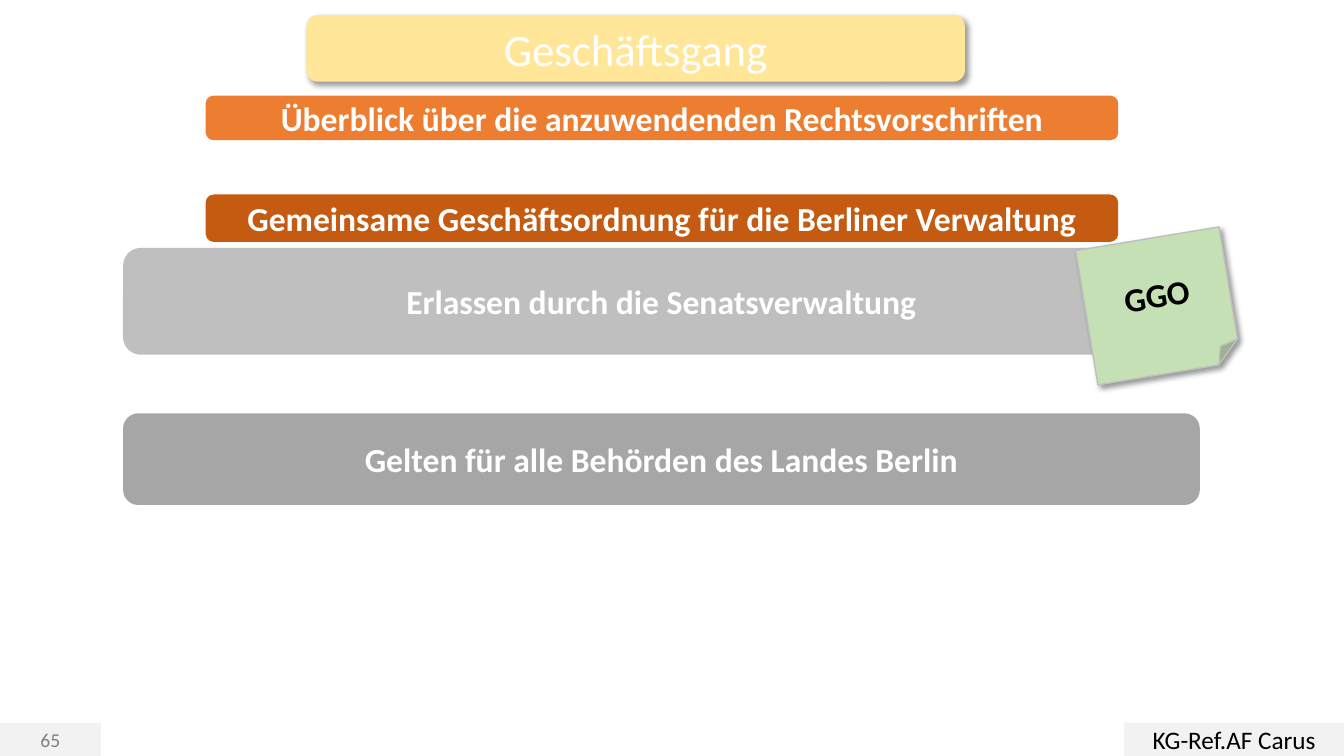
import pptx
import pptx.util
import pptx.dml.color
import pptx.enum.shapes
import pptx.enum.text
import pptx.oxml

PX = 9144
KIND = pptx.enum.shapes.MSO_SHAPE
SHADE = (
    '<a:effectLst xmlns:a="http://schemas.openxmlformats.org/drawingml/2006/main">'
    '<a:outerShdw blurRad="50800" dist="38100" dir="2700000" algn="tl" rotWithShape="0">'
    '<a:srgbClr val="000000"><a:alpha val="40000"/></a:srgbClr>'
    '</a:outerShdw></a:effectLst>'
)


def color(code):
    return pptx.dml.color.RGBColor.from_string(code)


def box(kind, place, fill, text, size, ink, bold=False, line=None):
    shape = slide.shapes.add_shape(kind, *[n * PX for n in place])
    shape.shadow.inherit = False
    shape.fill.solid()
    shape.fill.fore_color.rgb = color(fill)
    if line:
        shape.line.color.rgb = color(line)
        shape.line.width = pptx.util.Pt(1)
    else:
        shape.line.fill.background()
    frame = shape.text_frame
    frame.word_wrap = True
    frame.vertical_anchor = pptx.enum.text.MSO_ANCHOR.MIDDLE
    para = frame.paragraphs[0]
    para.alignment = pptx.enum.text.PP_ALIGN.CENTER
    run = para.add_run()
    run.text = text
    run.font.name = "Calibri"
    run.font.size = pptx.util.Pt(size)
    run.font.bold = bold
    run.font.color.rgb = color(ink)
    return shape


deck = pptx.Presentation()
deck.slide_width = 1333 * PX
deck.slide_height = 750 * PX
slide = deck.slides.add_slide(deck.slide_layouts[6])

box(KIND.RECTANGLE, (0, 718, 100, 32), "F2F2F2", "65", 14, "808080", line="F2F2F2")
box(KIND.RECTANGLE, (1115, 717, 218, 33), "F2F2F2", "KG-Ref.AF Carus", 18, "000000")

title = box(KIND.ROUNDED_RECTANGLE, (304, 15, 653, 66), "FFE699", "Geschäftsgang", 32, "FFFFFF")

bars = [
    (204, 95, 905, 44, "ED7D31", "Überblick über die anzuwendenden Rechtsvorschriften"),
    (204, 193, 905, 47, "C55A11", "Gemeinsame Geschäftsordnung für die Berliner Verwaltung"),
    (122, 246, 1068, 106, "BFBFBF", "Erlassen durch die Senatsverwaltung"),
    (122, 410, 1068, 91, "A6A6A6", "Gelten für alle Behörden des Landes Berlin"),
]
for *place, fill, text in bars:
    box(KIND.ROUNDED_RECTANGLE, place, fill, text, 24, "FFFFFF", bold=True)

note = box(KIND.FOLDED_CORNER, (1077, 236, 144, 135), "C5E0B4", "GGO", 24, "000000", bold=True, line="BFBFBF")
note.rotation = 350.6

for shape in (title, note):
    props = shape.element.spPr
    props.remove(props.find("{*}effectLst"))
    props.append(pptx.oxml.parse_xml(SHADE))

deck.save("out.pptx")
